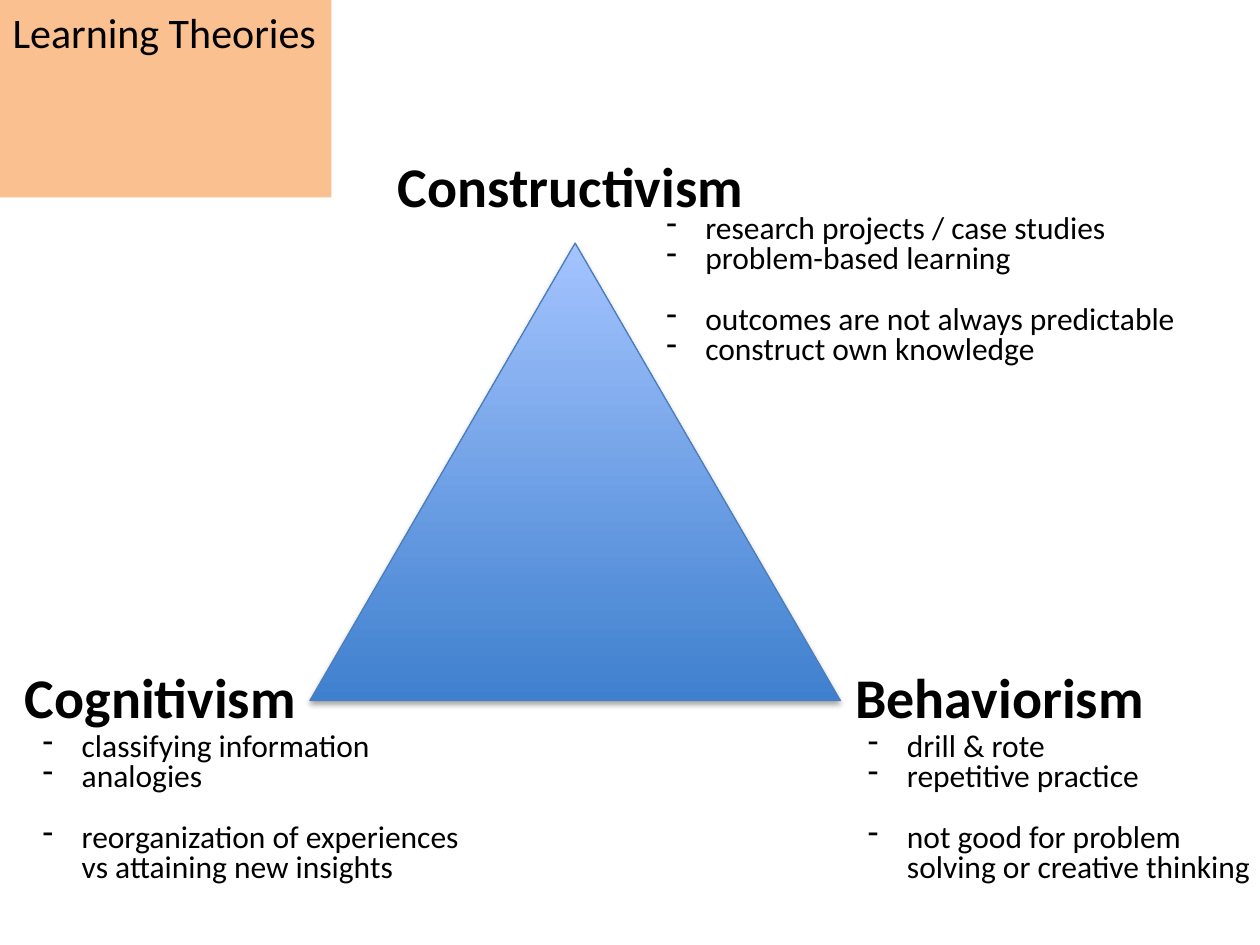
import pptx
import pptx.util
import pptx.dml.color
import pptx.enum.shapes
import pptx.enum.text
import pptx.oxml
import pptx.oxml.ns

Inches = pptx.util.Inches
Pt = pptx.util.Pt
RGBColor = pptx.dml.color.RGBColor

FONT = "Calibri"
BLACK = RGBColor(0x00, 0x00, 0x00)
PEACH = RGBColor(0xFA, 0xC0, 0x90)
DEEP = RGBColor(0x3F, 0x80, 0xCE)
PALE = RGBColor(0xA4, 0xC4, 0xFF)
EDGE = RGBColor(0x4B, 0x7E, 0xBC)
INDENT = Inches(0.31)

SHADOW = (
    f'<a:effectLst {pptx.oxml.ns.nsdecls("a")}>'
    '<a:outerShdw blurRad="40000" dist="23000" dir="5400000" rotWithShape="0">'
    '<a:srgbClr val="000000"><a:alpha val="35000"/></a:srgbClr>'
    '</a:outerShdw></a:effectLst>'
)
BULLET = f'<a:buChar {pptx.oxml.ns.nsdecls("a")} char="-"/>'

THEORIES = [
    ("Constructivism", (3.06, 1.15, 2.97), (5.19, 1.66, 4.27), [
        ["research projects / case studies", "problem-based learning"],
        ["outcomes are not always predictable", "construct own knowledge"],
    ]),
    ("Cognitivism", (0.1, 5.21, 2.37), (0.24, 5.77, 3.58), [
        ["classifying information", "analogies"],
        ["reorganization of experiences vs attaining new insights"],
    ]),
    ("Behaviorism", (6.69, 5.21, 2.52), (6.79, 5.77, 3.3), [
        ["drill & rote", "repetitive practice"],
        ["not good for problem solving or creative thinking"],
    ]),
]


def add_run(para, text, size, bold=False):
    run = para.add_run()
    run.text = text
    run.font.name = FONT
    run.font.size = Pt(size)
    run.font.bold = bold
    run.font.color.rgb = BLACK


def set_frame(frame, wrap):
    frame.word_wrap = wrap
    frame.auto_size = pptx.enum.text.MSO_AUTO_SIZE.SHAPE_TO_FIT_TEXT
    frame.vertical_anchor = pptx.enum.text.MSO_ANCHOR.TOP


def add_box(slide, place, height, wrap):
    left, top, width = place
    box = slide.shapes.add_textbox(
        Inches(left), Inches(top), Inches(width), Inches(height))
    set_frame(box.text_frame, wrap)
    return box.text_frame


def add_title(slide, text):
    title = slide.shapes.title
    title.left, title.top = Inches(0), Inches(0)
    title.width, title.height = Inches(2.63), Inches(0.5)
    title.fill.solid()
    title.fill.fore_color.rgb = PEACH
    set_frame(title.text_frame, False)
    para = title.text_frame.paragraphs[0]
    para.alignment = pptx.enum.text.PP_ALIGN.LEFT
    add_run(para, text, 24)


def add_head(slide, text, place):
    frame = add_box(slide, place, 0.64, False)
    add_run(frame.paragraphs[0], text, 32, True)


def add_list(slide, groups, place):
    frame = add_box(slide, place, 1.32, True)
    para = frame.paragraphs[0]
    for g, group in enumerate(groups):
        for i, text in enumerate(group):
            if g or i:
                para = frame.add_paragraph()
            props = para._p.get_or_add_pPr()
            props.set("marL", str(INDENT))
            props.set("indent", str(-INDENT))
            props.append(pptx.oxml.parse_xml(BULLET))
            para.line_spacing = 0.8
            if g and i == 0:
                para.space_before = Pt(17.5)
            add_run(para, text, 18)


def add_triangle(slide):
    shape = slide.shapes.add_shape(
        pptx.enum.shapes.MSO_SHAPE.ISOSCELES_TRIANGLE,
        Inches(2.46), Inches(1.93), Inches(4.21), Inches(3.63))
    shape.fill.gradient()
    shape.fill.gradient_angle = 90
    for stop, color, place in zip(
            shape.fill.gradient_stops, (DEEP, PALE), (0, 1)):
        stop.color.rgb = color
        stop.position = place
    shape.line.color.rgb = EDGE
    shape.line.width = Pt(0.75)
    shape._element.spPr.append(pptx.oxml.parse_xml(SHADOW))


def main():
    deck = pptx.Presentation()
    deck.slide_width, deck.slide_height = Inches(10), Inches(7.5)
    slide = deck.slides.add_slide(deck.slide_layouts[5])
    add_title(slide, "Learning Theories")
    add_triangle(slide)
    for name, head, body, groups in THEORIES:
        add_head(slide, name, head)
        add_list(slide, groups, body)
    deck.save("out.pptx")


if __name__ == "__main__":
    main()
